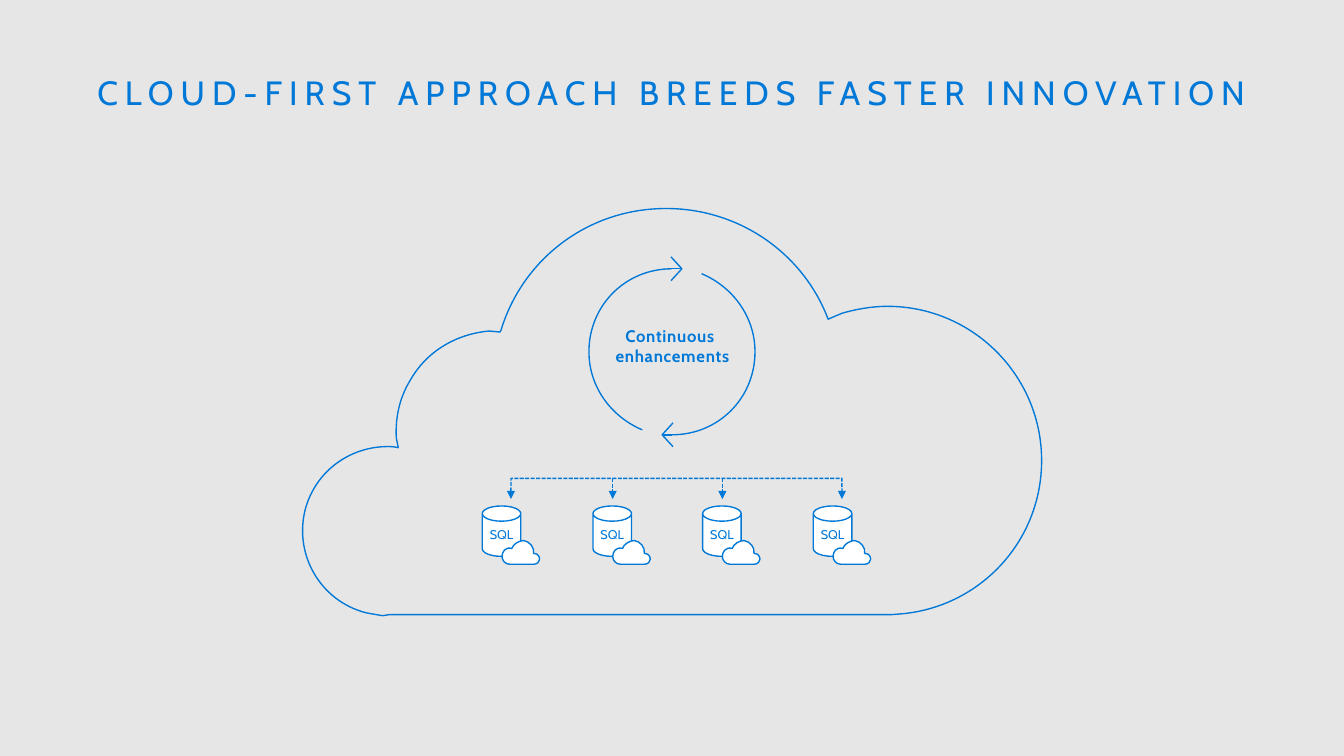
from lxml import etree
from pptx import Presentation
from pptx import util as u
from pptx.dml.color import RGBColor
from pptx.enum import dml, shapes, text
from pptx.oxml.ns import qn

PX = 9144  # EMU per px, 100 px to the inch
BLUE, WHITE, GREY = "0078D7", "FFFFFF", "E6E6E6"
FONT = "Cabin"

# Outlines: a start point, then (x, y) for a line or six numbers for a curve.
BIG_CLOUD = [
    (368, 0), (441, 0, 504, 44, 530, 107), (532, 112), (546, 106),
    (560, 102, 576, 99, 592, 99), (678, 99, 748, 169, 748, 255),
    (748, 336, 687, 402, 608, 410), (596, 411), (590, 411), (88, 411), (81, 412),
    (75, 411, 69, 410, 64, 409), (18, 397, -9, 350, 3, 304),
    (14, 264, 51, 239, 91, 241), (97, 242), (95, 232),
    (94, 212, 98, 192, 109, 174), (126, 144, 156, 127, 189, 124),
    (200, 125), (201, 123), (223, 51, 289, 0, 368, 0),
]
SMALL_CLOUD = [
    (22, 0), (28, 1, 33, 7, 32, 13), (37, 13, 38, 17, 38, 19),
    (38, 21, 36, 24, 32, 24), (8, 24), (3, 24, 0, 20, 0, 16),
    (0, 12, 3, 6, 10, 8), (11, 4, 17, 0, 22, 0),
]
HALF_CIRCLE = [(30, -79), (61, -66, 84, -36, 84, 0), (84, 47, 47, 84, 0, 84)]
ARROWHEAD = [(1, 72), (-10, 84), (1, 96)]


def px(*lengths):
    return [u.Emu(round(n * PX)) for n in lengths]


def rgb(colour):
    return RGBColor.from_string(colour)


def style(shape, fill=None):
    shape.shadow.inherit = False
    if fill:
        shape.fill.solid()
        shape.fill.fore_color.rgb = rgb(fill)
    else:
        shape.fill.background()
    set_line(shape.line)


def set_line(line, dashed=False, ends=()):
    """Draw a thin blue line, with triangles at the named ends."""
    line.color.rgb = rgb(BLUE)
    line.width = u.Pt(1)
    if dashed:
        line.dash_style = dml.MSO_LINE.SQUARE_DOT
    for end in ends:
        etree.SubElement(line._ln, qn(f"a:{end}"), type="triangle")


def set_text(tf, words, size, insets, spacing=0, bold=False, line_spacing=None):
    """Fill a frame with one centred paragraph; spacing is in points."""
    tf.word_wrap = True
    tf.margin_left, tf.margin_top, tf.margin_right, tf.margin_bottom = px(*insets)
    p = tf.paragraphs[0]
    p.text = words
    p.alignment = text.PP_ALIGN.CENTER
    p.line_spacing = line_spacing
    p.space_before = u.Pt(0)
    p.font.name = FONT
    p.font.size = u.Pt(size)
    p.font.bold = bold
    p.font.color.rgb = rgb(BLUE)
    p.font._rPr.set("spc", str(round(spacing * 100)))


def add_outline(s, x, y, outline, fill=None, close=False, turn=1):
    """Draw an outline from (x, y); turn=-1 rotates it by half a turn."""
    parts = [[px(x + turn * dx, y + turn * dy) for dx, dy in zip(part[::2], part[1::2])]
             for part in outline]
    builder = s.shapes.build_freeform(*parts[0][0], scale=1.0)
    builder.add_line_segments([part[-1] for part in parts[1:]], close=close)
    shape = builder.convert_to_shape()
    segments = list(shape._element.spPr.iter(qn("a:lnTo")))
    for segment, part in zip(segments, parts[1:]):
        if len(part) == 3:
            curve = etree.Element(qn("a:cubicBezTo"))
            for cx, cy in part:
                etree.SubElement(curve, qn("a:pt"), x=str(cx - shape.left),
                                 y=str(cy - shape.top))
            segment.getparent().replace(segment, curve)
    style(shape, fill)


def add_line(s, x1, y1, x2, y2, **line_style):
    line = s.shapes.add_connector(shapes.MSO_CONNECTOR.STRAIGHT, *px(x1, y1, x2, y2))
    set_line(line.line, **line_style)
    etree.SubElement(line._element.spPr, qn("a:effectLst"))


def add_title(s, x, y, w, h):
    title = s.shapes.title
    title.left, title.top, title.width, title.height = px(x, y, w, h)
    tf = title.text_frame
    tf.auto_size = text.MSO_AUTO_SIZE.NONE
    tf.vertical_anchor = text.MSO_ANCHOR.TOP
    set_text(tf, "CLOUD-FIRST APPROACH BREEDS FASTER INNOVATION", 24.5,
             (10, 82, 10, 5), spacing=5.1, line_spacing=0.9)


def add_cycle(s, cx, cy):
    """Two circling arrows around a caption, centred on (cx, cy)."""
    caption = s.shapes.add_textbox(*px(cx - 105, cy - 31, 211, 52))
    set_text(caption.text_frame, "Continuous \venhancements", 12.2,
             (0, 5, 0, 5), spacing=0.5, bold=True)
    for turn in (1, -1):
        add_outline(s, cx, cy, HALF_CIRCLE, turn=turn)
        add_outline(s, cx, cy, ARROWHEAD, turn=turn)
        add_line(s, cx, cy + turn * 84, cx - turn * 10, cy + turn * 84)


def add_database(s, x, y):
    can = s.shapes.add_shape(shapes.MSO_SHAPE.CAN, *px(x, y, 39, 51))
    can.adjustments[0] = 0.395
    style(can, WHITE)
    can.text_frame.vertical_anchor = text.MSO_ANCHOR.MIDDLE
    set_text(can.text_frame, "SQL", 9.2, (0, 16, 0, 16), line_spacing=0.9)
    add_outline(s, x + 20, y + 35, SMALL_CLOUD, WHITE, close=True)


def add_database_row(s, x, y, span, count=4):
    """Databases spread over span, under a dashed bracket with arrows."""
    lefts = [x + round(i * span / (count - 1)) for i in range(count)]
    for left in lefts:
        add_database(s, left, y)

    depth, top = 21, y - 28
    mid_x, mid_y = x + 29 + span / 2, top + depth / 2
    bracket = s.shapes.add_shape(
        shapes.MSO_SHAPE.RIGHT_BRACKET,
        *px(mid_x - depth / 2, mid_y - span / 2, depth, span))
    bracket.rotation = 270
    bracket.adjustments[0] = 0.006
    style(bracket)
    set_line(bracket.line, dashed=True, ends=("headEnd", "tailEnd"))
    for left in lefts[1:-1]:
        add_line(s, left + 20, top, left + 20, top + depth,
                 dashed=True, ends=("tailEnd",))


def main():
    prs = Presentation()
    prs.slide_width, prs.slide_height = px(1360, 765)
    s = prs.slides.add_slide(prs.slide_layouts.get_by_name("Title Only"))
    s.background.fill.solid()
    s.background.fill.fore_color.rgb = rgb(GREY)
    add_title(s, 0, 0, 1360, 78)
    add_cycle(s, 680, 356)
    add_database_row(s, 488, 512, 335)
    add_outline(s, 306, 211, BIG_CLOUD, close=True)
    prs.save("out.pptx")


if __name__ == "__main__":
    main()
